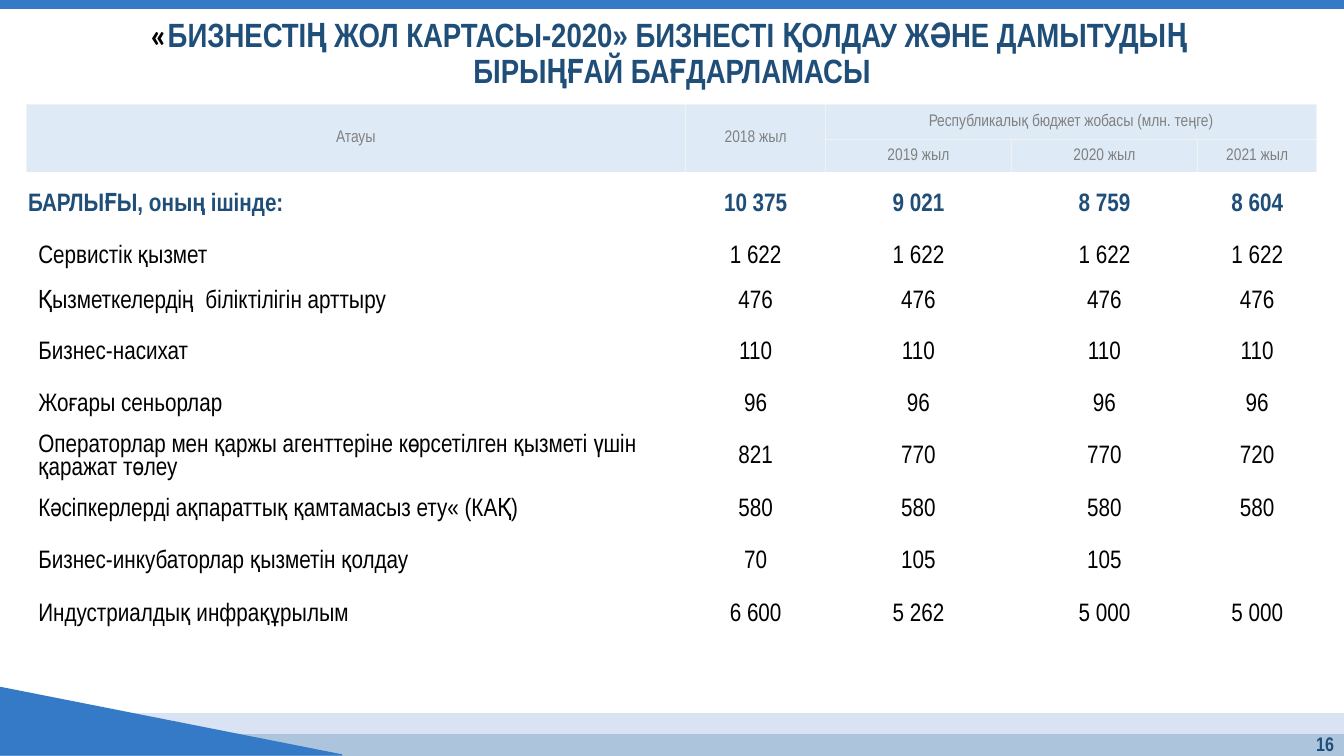
from lxml.etree import SubElement
from pptx import Presentation
from pptx.dml.color import RGBColor
from pptx.enum.shapes import MSO_SHAPE
from pptx.enum.text import MSO_ANCHOR, PP_ALIGN
from pptx.oxml.ns import qn
from pptx.util import Inches, Pt

WIDTH, HEIGHT = 13.33, 7.5
COLORS = {
    "blue": "347AC6", "steel": "ACC5DC", "pale": "DAE3F3", "header": "DEEBF7",
    "border": "F2F2F2", "navy": "1F4E79", "gray": "808080", "black": "000000",
}
FORMATS = {
    "mark": {"name": "Calibri", "size": Pt(24), "bold": True, "color": "black"},
    "title": {"name": "Arial Narrow", "size": Pt(24), "bold": True, "color": "navy"},
    "header": {"name": "Arial Narrow", "size": Pt(12), "bold": False, "color": "gray"},
    "total": {"name": "Arial Narrow", "size": Pt(18), "bold": True, "color": "navy"},
    "body": {"name": "Arial Narrow", "size": Pt(18), "bold": False, "color": "black"},
    "page": {"name": "Arial Narrow", "size": Pt(14), "bold": True, "color": "navy"},
}
COLUMNS = [6.54, 1.39, 1.84, 1.85, 1.18]
ROWS = [0.34, 0.33, 0.64, 0.4, 0.49] + [0.52] * 6
HEADERS = [
    (0, 0, 2, 1, "Атауы"),
    (0, 1, 2, 1, "2018 жыл"),
    (0, 2, 1, 3, "Республикалық бюджет жобасы (млн. теңге)"),
    (1, 2, 1, 1, "2019 жыл"),
    (1, 3, 1, 1, "2020 жыл"),
    (1, 4, 1, 1, "2021 жыл"),
]
BUDGET = [
    ("БАРЛЫҒЫ, оның ішінде:", "10 375", "9 021", "8 759", "8 604"),
    ("Сервистік қызмет", "1 622", "1 622", "1 622", "1 622"),
    ("Қызметкелердің  біліктілігін арттыру", "476", "476", "476", "476"),
    ("Бизнес-насихат", "110", "110", "110", "110"),
    ("Жоғары сеньорлар", "96", "96", "96", "96"),
    ("Операторлар мен қаржы агенттеріне көрсетілген қызметі үшін қаражат төлеу",
     "821", "770", "770", "720"),
    ("Кәсіпкерлерді ақпараттық қамтамасыз ету« (КАҚ)", "580", "580", "580", "580"),
    ("Бизнес-инкубаторлар қызметін қолдау", "70", "105", "105", ""),
    ("Индустриалдық инфрақұрылым", "6 600", "5 262", "5 000", "5 000"),
]


def rgb(name):
    """Return a palette colour."""
    return RGBColor.from_string(COLORS[name])


def add_text(paragraph, text, style):
    """Add a run in one of the named formats."""
    run = paragraph.add_run()
    run.text = text
    for attribute, value in FORMATS[style].items():
        if attribute == "color":
            run.font.color.rgb = rgb(value)
        else:
            setattr(run.font, attribute, value)


def add_band(slide, kind, box, color):
    """Draw one flat decorative shape."""
    shape = slide.shapes.add_shape(kind, *map(Inches, box))
    shape.shadow.inherit = False
    shape.fill.solid()
    shape.fill.fore_color.rgb = rgb(color)
    shape.line.color.rgb = rgb(color)
    shape.line.width = Pt(1)


def add_decoration(slide):
    """Draw the top bar and the footer bands."""
    add_band(slide, MSO_SHAPE.RECTANGLE, (0, HEIGHT - 0.23, WIDTH, 0.23), "steel")
    add_band(slide, MSO_SHAPE.RECTANGLE, (0, HEIGHT - 0.42, WIDTH, 0.2), "pale")
    add_band(slide, MSO_SHAPE.RIGHT_TRIANGLE, (0, HEIGHT - 0.68, 3.39, 0.67), "blue")
    add_band(slide, MSO_SHAPE.RECTANGLE, (0, -0.02, WIDTH, 0.1), "blue")


def fill_title(slide, box):
    """Place the title and write its two lines."""
    title = slide.shapes.title
    title.left, title.top, title.width, title.height = map(Inches, box)
    frame = title.text_frame
    frame.vertical_anchor = MSO_ANCHOR.MIDDLE
    first, second = frame.paragraphs[0], frame.add_paragraph()
    add_text(first, "«", "mark")
    add_text(first, "БИЗНЕСТІҢ ЖОЛ КАРТАСЫ-2020» БИЗНЕСТІ ҚОЛДАУ ЖӘНЕ ДАМЫТУДЫҢ ", "title")
    add_text(second, "БІРЫҢҒАЙ БАҒДАРЛАМАСЫ", "title")
    for paragraph in (first, second):
        paragraph.alignment = PP_ALIGN.CENTER
        paragraph.line_spacing = 0.9
        paragraph.space_before = Pt(0)


def write_cell(cell, text, style, left=0.0, alignment=PP_ALIGN.CENTER):
    """Write a vertically centred cell with tight margins."""
    cell.vertical_anchor = MSO_ANCHOR.MIDDLE
    cell.margin_left = Inches(left)
    cell.margin_right = cell.margin_top = cell.margin_bottom = 0
    paragraph = cell.text_frame.paragraphs[0]
    paragraph.alignment = alignment
    if text:
        add_text(paragraph, text, style)


def format_header(cell):
    """Give a header cell its borders and fill."""
    properties = cell._tc.get_or_add_tcPr()
    for side in ("a:lnL", "a:lnR", "a:lnT"):
        line = SubElement(properties, qn(side), w=str(Pt(1)))
        solid = SubElement(line, qn("a:solidFill"))
        SubElement(solid, qn("a:srgbClr"), val=COLORS["border"])
    cell.fill.solid()
    cell.fill.fore_color.rgb = rgb("header")


def add_budget_table(slide, left, top):
    """Build the budget table with its two-level header."""
    frame = slide.shapes.add_table(
        len(ROWS), len(COLUMNS), Inches(left), Inches(top),
        Inches(sum(COLUMNS)), Inches(sum(ROWS)))
    table = frame.table
    table.first_row = table.horz_banding = False
    for column, width in zip(table.columns, COLUMNS):
        column.width = Inches(width)
    for row, height in zip(table.rows, ROWS):
        row.height = Inches(height)
    for row in range(2):
        for column in range(len(COLUMNS)):
            format_header(table.cell(row, column))
    for row, column, height, width, text in HEADERS:
        cell = table.cell(row, column)
        if height * width > 1:
            cell.merge(table.cell(row + height - 1, column + width - 1))
        write_cell(cell, text, "header")
    for row, values in enumerate(BUDGET, start=2):
        style, indent = ("total", 0.02) if row == 2 else ("body", 0.12)
        for column, text in enumerate(values):
            cell = table.cell(row, column)
            cell.fill.background()
            if column == 0:
                write_cell(cell, text, style, indent, PP_ALIGN.LEFT)
            else:
                write_cell(cell, text, style)


def add_page_number(slide, box):
    """Write the page number in the footer."""
    frame = slide.shapes.add_textbox(*map(Inches, box)).text_frame
    frame.word_wrap = True
    frame.vertical_anchor = MSO_ANCHOR.MIDDLE
    paragraph = frame.paragraphs[0]
    paragraph.alignment = PP_ALIGN.RIGHT
    paragraph.line_spacing = 0.9
    add_text(paragraph, "16", "page")


def main():
    """Build and save the slide."""
    presentation = Presentation()
    presentation.slide_width, presentation.slide_height = Inches(WIDTH), Inches(HEIGHT)
    slide = presentation.slides.add_slide(presentation.slide_layouts[5])
    add_decoration(slide)
    fill_title(slide, (0, 0.11, WIDTH, 0.86))
    add_budget_table(slide, 0.26, 1.04)
    add_page_number(slide, (WIDTH - 0.71, 7.26, 0.71, 0.27))
    presentation.save("out.pptx")


if __name__ == "__main__":
    main()
